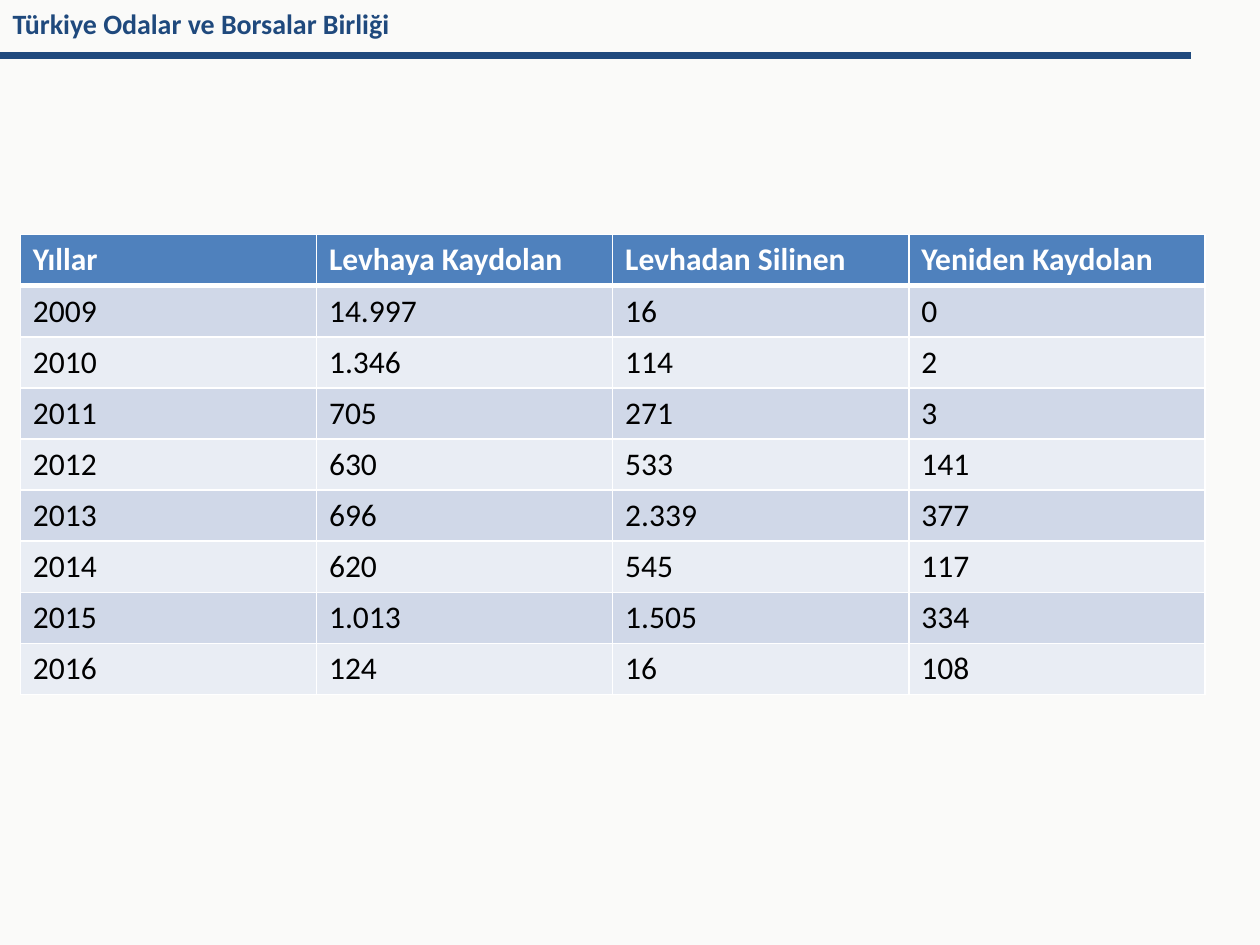
from lxml import etree
from pptx import Presentation
from pptx.dml.color import RGBColor
from pptx.enum.shapes import MSO_CONNECTOR
from pptx.enum.text import MSO_ANCHOR, MSO_AUTO_SIZE, PP_ALIGN
from pptx.oxml.ns import qn
from pptx.util import Cm, Pt

STRAIGHT = MSO_CONNECTOR.STRAIGHT
TOP = MSO_ANCHOR.TOP
LEFT = PP_ALIGN.LEFT
NO_AUTOFIT = MSO_AUTO_SIZE.NONE

BACKGROUND = RGBColor(0xFA, 0xFA, 0xF9)
NAVY = RGBColor(0x1F, 0x49, 0x7D)
HEADER_BLUE = RGBColor(0x4F, 0x81, 0xBD)
BAND_DARK = RGBColor(0xD0, 0xD8, 0xE8)
BAND_LIGHT = RGBColor(0xE9, 0xED, 0xF4)
WHITE = RGBColor(0xFF, 0xFF, 0xFF)
BLACK = RGBColor(0x00, 0x00, 0x00)

TITLE_FONT = {"name": "Calibri", "size": Pt(16), "bold": True}
HEADER_FONT = {"name": "Calibri", "size": Pt(18), "bold": True}
BODY_FONT = {"name": "Calibri", "size": Pt(18), "bold": False}

COLUMN_WIDTH = Cm(5.97)
ROW_HEIGHT = Cm(1.03)

REGISTRATIONS = [
    ("Yıllar", "Levhaya Kaydolan", "Levhadan Silinen", "Yeniden Kaydolan"),
    ("2009", "14.997", "16", "0"),
    ("2010", "1.346", "114", "2"),
    ("2011", "705", "271", "3"),
    ("2012", "630", "533", "141"),
    ("2013", "696", "2.339", "377"),
    ("2014", "620", "545", "117"),
    ("2015", "1.013", "1.505", "334"),
    ("2016", "124", "16", "108"),
]


def set_attributes(target, values):
    for name, value in values.items():
        setattr(target, name, value)


def format_font(font, values, color):
    set_attributes(font, values)
    font.color.rgb = color


def add_title(slide, text):
    title = slide.shapes.title
    set_attributes(title, {"left": 0, "top": 0, "width": Cm(20.7), "height": Cm(0.94)})
    frame = title.text_frame
    frame.text = text
    set_attributes(frame, {"word_wrap": True, "auto_size": NO_AUTOFIT,
                           "vertical_anchor": TOP})
    paragraph = frame.paragraphs[0]
    paragraph.alignment = LEFT
    format_font(paragraph.runs[0].font, TITLE_FONT, NAVY)


def add_rule(slide, left, top, right):
    rule = slide.shapes.add_connector(STRAIGHT, left, top, right, top)
    rule.line.color.rgb = NAVY
    rule.line.width = Pt(4)
    etree.SubElement(rule._element.spPr, qn("a:effectLst"))


def add_borders(cell, widths):
    properties = cell._tc.get_or_add_tcPr()
    for side, width in widths.items():
        line = etree.SubElement(properties, qn(f"a:ln{side}"), w=str(Pt(width)))
        fill = etree.SubElement(line, qn("a:solidFill"))
        etree.SubElement(fill, qn("a:srgbClr"), val=str(WHITE))


def format_cell(cell, text, row):
    # The thick line lies between the header and the first year
    add_borders(cell, {"L": 1, "R": 1, "T": 3 if row == 1 else 1,
                       "B": 3 if row == 0 else 1})
    if row == 0:
        fill, font, color = HEADER_BLUE, HEADER_FONT, WHITE
    else:
        fill = BAND_DARK if row % 2 else BAND_LIGHT
        font, color = BODY_FONT, BLACK
    cell.fill.solid()
    cell.fill.fore_color.rgb = fill
    cell.text = text
    format_font(cell.text_frame.paragraphs[0].runs[0].font, font, color)


def add_table(slide, rows, left, top):
    row_count, column_count = len(rows), len(rows[0])
    table = slide.shapes.add_table(
        row_count, column_count, left, top,
        COLUMN_WIDTH * column_count, ROW_HEIGHT * row_count).table
    for column in table.columns:
        column.width = COLUMN_WIDTH
    for row, texts in enumerate(rows):
        table.rows[row].height = ROW_HEIGHT
        for column, text in enumerate(texts):
            format_cell(table.cell(row, column), text, row)


def main():
    presentation = Presentation()
    set_attributes(presentation, {"slide_width": Cm(25.4), "slide_height": Cm(19.05)})
    slide = presentation.slides.add_slide(presentation.slide_layouts[5])
    slide.background.fill.solid()
    slide.background.fill.fore_color.rgb = BACKGROUND

    # Heading band
    add_rule(slide, Cm(0), Cm(1.12), Cm(24))
    add_title(slide, "Türkiye Odalar ve Borsalar Birliği")

    # Yearly registrations
    add_table(slide, REGISTRATIONS, Cm(0.41), Cm(4.73))

    presentation.save("out.pptx")


if __name__ == "__main__":
    main()
